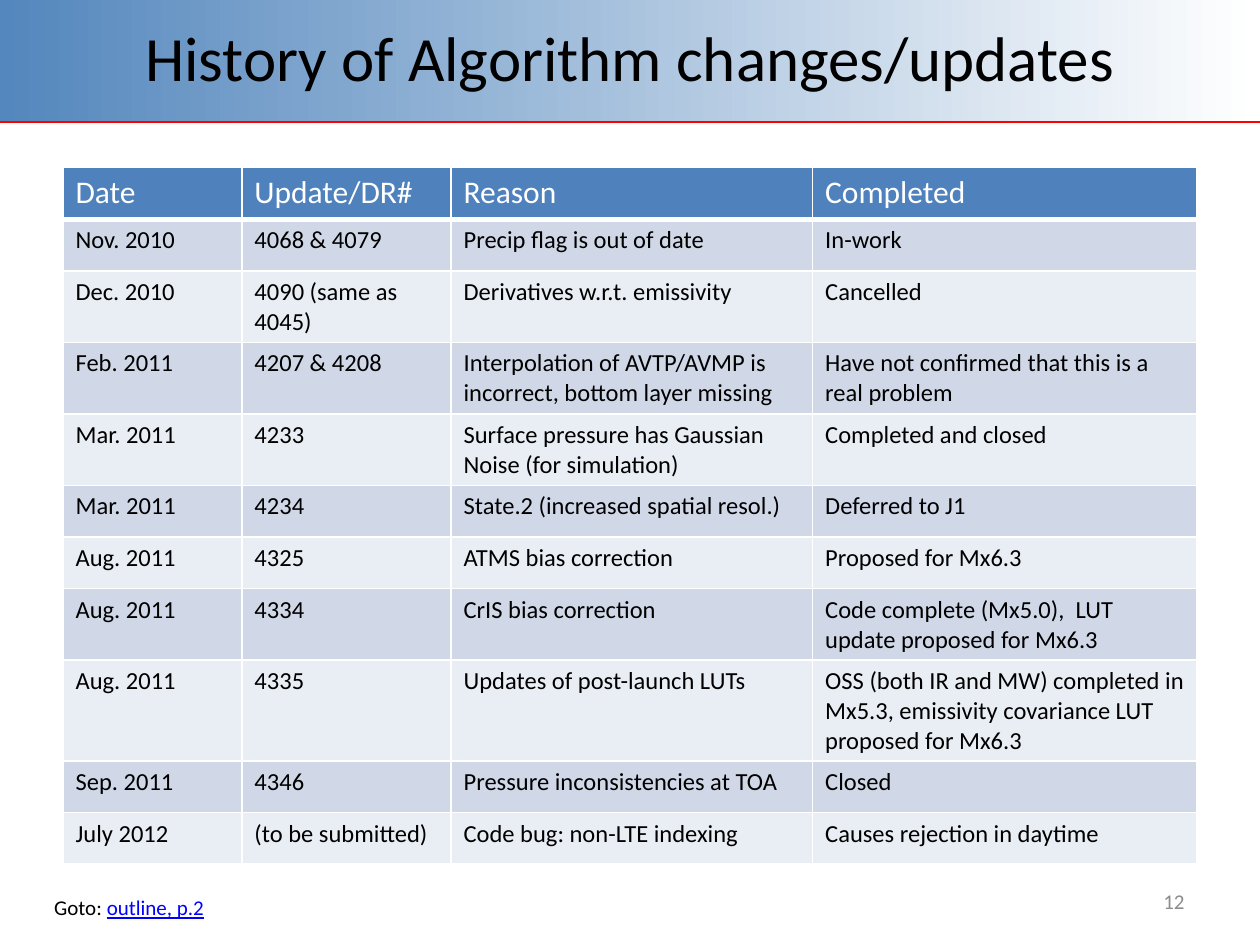
from typing import NamedTuple

import lxml.etree
import pptx
import pptx.dml.color
import pptx.enum.shapes
import pptx.enum.text
import pptx.oxml.ns
import pptx.util

Inches = pptx.util.Inches
Pt = pptx.util.Pt
ALIGN = pptx.enum.text.PP_ALIGN
ANCHOR = pptx.enum.text.MSO_ANCHOR
qn = pptx.oxml.ns.qn

COLORS = {
    "banner": "5487BD", "white": "FFFFFF", "rule": "FF0000", "text": "000000",
    "header": "4F81BD", "band_dark": "D0D8E8", "band_light": "E9EDF4",
    "number": "8C8C8C", "link": "0000FF",
}
FONT = "Calibri"


class Update(NamedTuple):
    date: str
    request: str
    reason: str
    status: str


class Span(NamedTuple):
    text: str
    color: str = "text"
    underline: bool = False


class Label(NamedTuple):
    box: tuple[float, float, float, float]
    spans: list[Span]
    size: int
    align: ALIGN
    anchor: ANCHOR


HEADINGS = Update("Date", "Update/DR#", "Reason", "Completed")
UPDATES = [
    Update("Nov. 2010", "4068 & 4079", "Precip flag is out of date", "In-work"),
    Update("Dec. 2010", "4090 (same as 4045)", "Derivatives w.r.t. emissivity",
           "Cancelled"),
    Update("Feb. 2011", "4207 & 4208",
           "Interpolation of AVTP/AVMP is incorrect, bottom layer missing",
           "Have not confirmed that this is a real problem"),
    Update("Mar. 2011", "4233",
           "Surface pressure has Gaussian Noise (for simulation)",
           "Completed and closed"),
    Update("Mar. 2011", "4234", "State.2 (increased spatial resol.)",
           "Deferred to J1"),
    Update("Aug. 2011", "4325", "ATMS bias correction", "Proposed for Mx6.3"),
    Update("Aug. 2011", "4334", "CrIS bias correction",
           "Code complete (Mx5.0),  LUT update proposed for Mx6.3"),
    Update("Aug. 2011", "4335", "Updates of post-launch LUTs",
           "OSS (both IR and MW) completed in Mx5.3, emissivity covariance LUT "
           "proposed for Mx6.3"),
    Update("Sep. 2011", "4346", "Pressure inconsistencies at TOA", "Closed"),
    Update("July 2012", "(to be submitted)", "Code bug: non-LTE indexing",
           "Causes rejection in daytime"),
]
COLUMN_WIDTHS = [1.42, 1.66, 2.87, 3.05]
ROW_HEIGHT = 0.41

LABELS = [
    Label((7.17, 6.95, 2.33, 0.4), [Span("12", "number")], 12,
          ALIGN.RIGHT, ANCHOR.MIDDLE),
    Label((0.16, 7.05, 1.73, 0.3),
          [Span("Goto: "), Span("outline, p.2", "link", True)], 12,
          ALIGN.CENTER, ANCHOR.TOP),
]
TITLE = Label((0.5, 0, 9, 0.9), [Span("History of Algorithm changes/updates")], 36,
              ALIGN.CENTER, ANCHOR.MIDDLE)


def rgb(name: str) -> pptx.dml.color.RGBColor:
    return pptx.dml.color.RGBColor.from_string(COLORS[name])


def add_run(p, span: Span, size: int) -> None:
    r = p.add_run()
    r.text = span.text
    formats = {"name": FONT, "size": Pt(size), "underline": span.underline}
    for key, value in formats.items():
        setattr(r.font, key, value)
    r.font.color.rgb = rgb(span.color)


def add_label(shapes, label: Label) -> None:
    sp = shapes.add_textbox(*map(Inches, label.box))
    tf = sp.text_frame
    tf.word_wrap = True
    tf.vertical_anchor = label.anchor
    p = tf.paragraphs[0]
    p.alignment = label.align
    for span in label.spans:
        add_run(p, span, label.size)


def add_banner(shapes) -> None:
    """Draw the fading title band and the red rule below it."""
    sp = shapes.add_shape(pptx.enum.shapes.MSO_SHAPE.RECTANGLE,
                          Inches(0), Inches(-0.01), Inches(10), Inches(0.97))
    sp.shadow.inherit = False
    sp.line.fill.background()
    sp.fill.gradient()
    sp.fill.gradient_angle = 0
    for stop, position, color in zip(sp.fill.gradient_stops, (0, 1),
                                     ("banner", "white")):
        stop.position = position
        stop.color.rgb = rgb(color)

    rule = shapes.add_connector(pptx.enum.shapes.MSO_CONNECTOR.STRAIGHT,
                                Inches(0), Inches(0.97), Inches(10), Inches(0.97))
    rule.line.color.rgb = rgb("rule")
    rule.line.width = Pt(1.25)
    lxml.etree.SubElement(rule._element.spPr, qn("a:effectLst"))


def set_borders(cell, bottom: float) -> None:
    """Give the cell white borders; call before its fill is set."""
    tc_pr = cell._tc.get_or_add_tcPr()
    for side, width in {"L": 1, "R": 1, "T": 1, "B": bottom}.items():
        ln = lxml.etree.SubElement(tc_pr, qn(f"a:ln{side}"), w=str(Pt(width)))
        fill = lxml.etree.SubElement(ln, qn("a:solidFill"))
        lxml.etree.SubElement(fill, qn("a:srgbClr"), val=COLORS["white"])


def fill_row(row, update: Update, fill: str, color: str, size: int,
             bottom: float) -> None:
    row.height = Inches(ROW_HEIGHT)
    for cell, text in zip(row.cells, update):
        set_borders(cell, bottom)
        cell.fill.solid()
        cell.fill.fore_color.rgb = rgb(fill)
        add_run(cell.text_frame.paragraphs[0], Span(text, color), size)


def add_history(shapes) -> None:
    count = len(UPDATES) + 1
    table = shapes.add_table(count, len(COLUMN_WIDTHS), Inches(0.5), Inches(1.33),
                             Inches(sum(COLUMN_WIDTHS)),
                             Inches(ROW_HEIGHT * count)).table
    for column, width in zip(table.columns, COLUMN_WIDTHS):
        column.width = Inches(width)
    fill_row(table.rows[0], HEADINGS, "header", "white", 18, 3)
    for i, update in enumerate(UPDATES):
        band = "band_light" if i % 2 else "band_dark"
        fill_row(table.rows[i + 1], update, band, "text", 14, 1)


def main() -> None:
    prs = pptx.Presentation()
    prs.slide_width, prs.slide_height = Inches(10), Inches(7.5)
    s = prs.slides.add_slide(prs.slide_layouts[6])
    add_banner(s.shapes)
    add_label(s.shapes, TITLE)
    add_history(s.shapes)
    for label in LABELS:
        add_label(s.shapes, label)
    prs.save("out.pptx")


if __name__ == "__main__":
    main()
